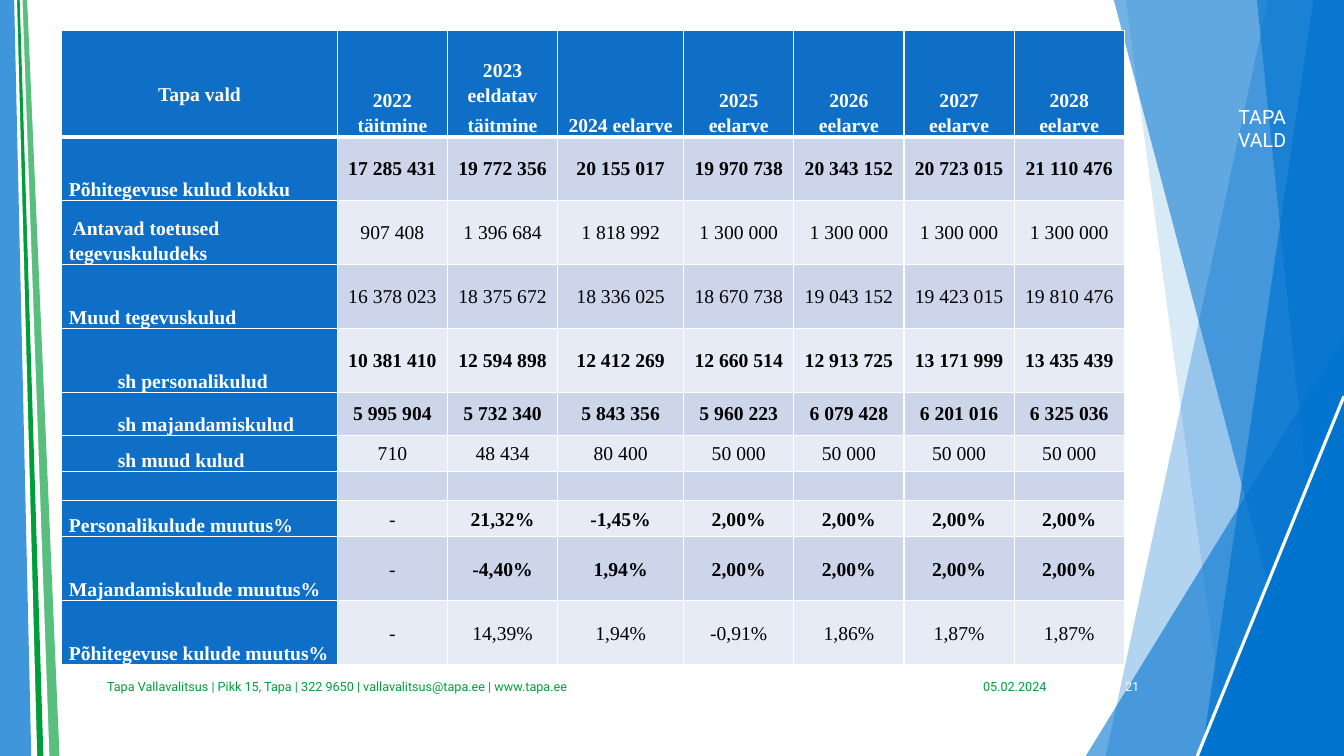
from dataclasses import dataclass

from lxml.etree import SubElement
from pptx import Presentation
from pptx.dml.color import RGBColor
from pptx.enum.shapes import MSO_CONNECTOR, MSO_SHAPE
from pptx.enum.text import MSO_ANCHOR as ANCHOR, PP_ALIGN as ALIGN
from pptx.oxml.ns import qn
from pptx.util import Pt


@dataclass(frozen=True)
class Theme:
    blue: str = "0073CF"
    green: str = "009E3B"
    white: str = "FFFFFF"
    black: str = "000000"
    label_fill: str = "0F6FC6"
    bands: tuple = ("CCD5EA", "E7EBF5")
    slide_font: str = "Roboto"
    table_font: str = "Times New Roman"
    label_size: float = 14
    footer_size: float = 9


THEME = Theme()
WIDTH, HEIGHT = 960, 540
INSET = 5
SUB_INDENT = 35
SPACED = {"line_spacing": 1.15, "space_after": Pt(4)}

# Corner points and opacity in percent, from back to front
RIGHT_FACETS_BACK = [
    ([(905.8, 0), (WIDTH, 0), (WIDTH, HEIGHT), (789.8, HEIGHT)], 30),
    ([(804.2, 0), (WIDTH, 0), (WIDTH, HEIGHT), (877, HEIGHT)], 15),
]
RIGHT_FACETS_FRONT = [
    ([(795.6, 0), (WIDTH, 0), (WIDTH, HEIGHT), (938.2, HEIGHT)], 55),
    ([(938.2, 0), (WIDTH, 0), (WIDTH, HEIGHT), (858.2, HEIGHT)], 65),
    ([(897.8, 0), (WIDTH, 0), (WIDTH, HEIGHT), (953.3, HEIGHT)], 60),
]
# Top width, bottom width, colour, opacity
LEFT_STRIPES = [
    (19.4, 42.5, THEME.green, 65),
    (16.1, 35.3, THEME.white, 100),
    (14.1, 31, THEME.green, 100),
    (12.2, 26.6, THEME.white, 100),
    (10.1, 22.3, THEME.blue, 75),
]

COLUMNS = [196.8, 78.7, 78.7, 90] + [78.7] * 4
HEADER_HEIGHT = 76.2
HEADERS = ["Tapa vald", "2022 täitmine", "2023 eeldatav\ntäitmine", "2024 eelarve",
           "2025 eelarve", "2026 eelarve", "2027 eelarve", "2028 eelarve"]
# Height, label, label indent, bold values, values
BUDGET = [
    (45.7, "Põhitegevuse kulud kokku", 0, True,
     "17 285 431|19 772 356|20 155 017|19 970 738|20 343 152|20 723 015|21 110 476"),
    (45.7, " Antavad toetused tegevuskuludeks", 0, False,
     "907 408|1 396 684|1 818 992|1 300 000|1 300 000|1 300 000|1 300 000"),
    (45.7, "Muud tegevuskulud", 0, False,
     "16 378 023|18 375 672|18 336 025|18 670 738|19 043 152|19 423 015|19 810 476"),
    (45.7, "sh personalikulud", SUB_INDENT, True,
     "10 381 410|12 594 898|12 412 269|12 660 514|12 913 725|13 171 999|13 435 439"),
    (30.8, "sh majandamiskulud", SUB_INDENT, True,
     "5 995 904|5 732 340|5 843 356|5 960 223|6 079 428|6 201 016|6 325 036"),
    (25.7, "sh muud kulud", SUB_INDENT, False,
     "710|48 434|80 400|50 000|50 000|50 000|50 000"),
    (20.5, "", 0, False, "||||||"),
    (25.7, "Personalikulude muutus%", 0, True,
     "-|21,32%|-1,45%|2,00%|2,00%|2,00%|2,00%"),
    (45.7, "Majandamiskulude muutus%", 0, True,
     "-|-4,40%|1,94%|2,00%|2,00%|2,00%|2,00%"),
    (45.7, "Põhitegevuse kulude muutus%", 0, False,
     "-|14,39%|1,94%|-0,91%|1,86%|1,87%|1,87%"),
]


def set_values(target, values):
    for name, value in values.items():
        setattr(target, name, value)


class SlideBuilder:
    def __init__(self, slide, theme):
        self.slide = slide
        self.shapes = slide.shapes
        self.theme = theme

    def paint(self, shape, color, opacity):
        shape.shadow.inherit = False
        shape.line.fill.background()
        shape.fill.solid()
        shape.fill.fore_color.rgb = RGBColor.from_string(color)
        if opacity < 100:
            color_element = shape._element.spPr.find(qn("a:solidFill"))[0]
            SubElement(color_element, qn("a:alpha"), val=str(opacity * 1000))

    def polygon(self, points, color, opacity=100):
        corners = [(Pt(x), Pt(y)) for x, y in points]
        builder = self.shapes.build_freeform(*corners[0], scale=1.0)
        builder.add_line_segments(corners[1:], close=True)
        self.paint(builder.convert_to_shape(), color, opacity)

    def corner_triangle(self, left, top, opacity=100):
        """Right-angled triangle filling the bottom right corner of the slide."""
        box = [Pt(v) for v in (left, top, WIDTH - left, HEIGHT - top)]
        shape = self.shapes.add_shape(MSO_SHAPE.ISOSCELES_TRIANGLE, *box)
        shape.adjustments[0] = 1
        self.paint(shape, self.theme.blue, opacity)

    def line(self, start, end, color, width):
        ends = [Pt(v) for v in (*start, *end)]
        connector = self.shapes.add_connector(MSO_CONNECTOR.STRAIGHT, *ends)
        connector.line.color.rgb = RGBColor.from_string(color)
        connector.line.width = Pt(width)
        SubElement(connector._element.spPr, qn("a:effectLst"))

    def fill_text(self, frame, text, paragraph_format, color, **font_format):
        for index, line in enumerate(text.split("\n")):
            paragraph = frame.add_paragraph() if index else frame.paragraphs[0]
            set_values(paragraph, paragraph_format)
            if not line:
                size = str(int(font_format["size"].pt * 100))
                SubElement(paragraph._p, qn("a:endParaRPr"), sz=size)
                continue
            run = paragraph.add_run()
            run.text = line
            set_values(run.font, font_format)
            run.font.color.rgb = RGBColor.from_string(color)

    def text(self, text, box, color, size, align, inset=7.2):
        frame = self.shapes.add_textbox(*[Pt(v) for v in box]).text_frame
        set_values(frame, {"word_wrap": True, "vertical_anchor": ANCHOR.MIDDLE,
                           "margin_left": Pt(inset), "margin_right": Pt(inset)})
        self.fill_text(frame, text, {"alignment": align}, color,
                       size=Pt(size), name=self.theme.slide_font)

    def cell(self, cell, text, fill, color, paragraph_format, anchor, margins,
             top=1, bottom=1, **font_format):
        """Margins are left, right and bottom; top and bottom are border widths."""
        left, right, below = margins
        set_values(cell, {"vertical_anchor": anchor, "margin_left": Pt(left),
                          "margin_right": Pt(right), "margin_top": 0,
                          "margin_bottom": Pt(below)})
        properties = cell._tc.get_or_add_tcPr()
        for side, width in (("L", 1), ("R", 1), ("T", top), ("B", bottom)):
            border = SubElement(properties, qn(f"a:ln{side}"), w=str(Pt(width)))
            solid = SubElement(border, qn("a:solidFill"))
            SubElement(solid, qn("a:srgbClr"), val=self.theme.white)
        cell.fill.solid()
        cell.fill.fore_color.rgb = RGBColor.from_string(fill)
        self.fill_text(cell.text_frame, text, paragraph_format, color,
                       size=Pt(self.theme.label_size), name=self.theme.table_font,
                       **font_format)

    def budget_table(self, left, top):
        theme = self.theme
        heights = [HEADER_HEIGHT] + [row[0] for row in BUDGET]
        box = [Pt(v) for v in (left, top, sum(COLUMNS), sum(heights))]
        table = self.shapes.add_table(len(heights), len(COLUMNS), *box).table
        table.horz_banding = False
        for column, width in zip(table.columns, COLUMNS):
            column.width = Pt(width)
        for row, height in zip(table.rows, heights):
            row.height = Pt(height)
        centred = {"alignment": ALIGN.CENTER}
        for column, header in enumerate(HEADERS):
            below = 0 if column else 22
            self.cell(table.cell(0, column), header, theme.label_fill, theme.white,
                      centred | SPACED, ANCHOR.BOTTOM, (INSET, INSET, below),
                      bottom=3, bold=True)
        for row, (_, label, indent, bold, values) in enumerate(BUDGET, 1):
            top_border = 3 if row == 1 else 1
            self.cell(table.cell(row, 0), label, theme.label_fill, theme.white, SPACED,
                      ANCHOR.BOTTOM, (INSET + indent, INSET, 0), top=top_border, bold=True)
            is_change = label.endswith("%")
            side = INSET if is_change else 0
            for column, value in enumerate(values.split("|"), 1):
                missing = value == "-"
                self.cell(table.cell(row, column), value, theme.bands[(row - 1) % 2],
                          theme.black, centred | (SPACED if is_change else {}),
                          ANCHOR.MIDDLE, (side, side, 0), top=top_border,
                          bold=bold and not missing, italic=missing)


def main():
    presentation = Presentation()
    set_values(presentation, {"slide_width": Pt(WIDTH), "slide_height": Pt(HEIGHT)})
    builder = SlideBuilder(presentation.slides.add_slide(presentation.slide_layouts[6]), THEME)
    for points, opacity in RIGHT_FACETS_BACK:
        builder.polygon(points, THEME.blue, opacity)
    builder.corner_triangle(775.6, 239.8, 60)
    for points, opacity in RIGHT_FACETS_FRONT:
        builder.polygon(points, THEME.blue, opacity)
    builder.corner_triangle(855.2, 283)
    builder.line((WIDTH, 283), (855.2, HEIGHT), THEME.white, 2.25)
    builder.text("TAPA VALD", (859, 79.2, 85, 24.5), THEME.white, THEME.label_size,
                 ALIGN.CENTER, inset=10)
    for top_width, bottom_width, color, opacity in LEFT_STRIPES:
        builder.polygon([(0, 0), (top_width, 0), (bottom_width, HEIGHT), (0, HEIGHT)],
                        color, opacity)
    builder.budget_table(44.2, 21.6)
    for text, left, width, color, align in [
        ("05.02.2024", 682.5, 72, THEME.green, ALIGN.RIGHT),
        ("Tapa Vallavalitsus | Pikk 15, Tapa | 322 9650 | vallavalitsus@tapa.ee | www.tapa.ee",
         69.4, 600.5, THEME.green, ALIGN.LEFT),
        ("21", 766.8, 54, THEME.white, ALIGN.RIGHT),
    ]:
        builder.text(text, (left, 476.2, width, 28.8), color, THEME.footer_size, align)
    presentation.save("out.pptx")


if __name__ == "__main__":
    main()
